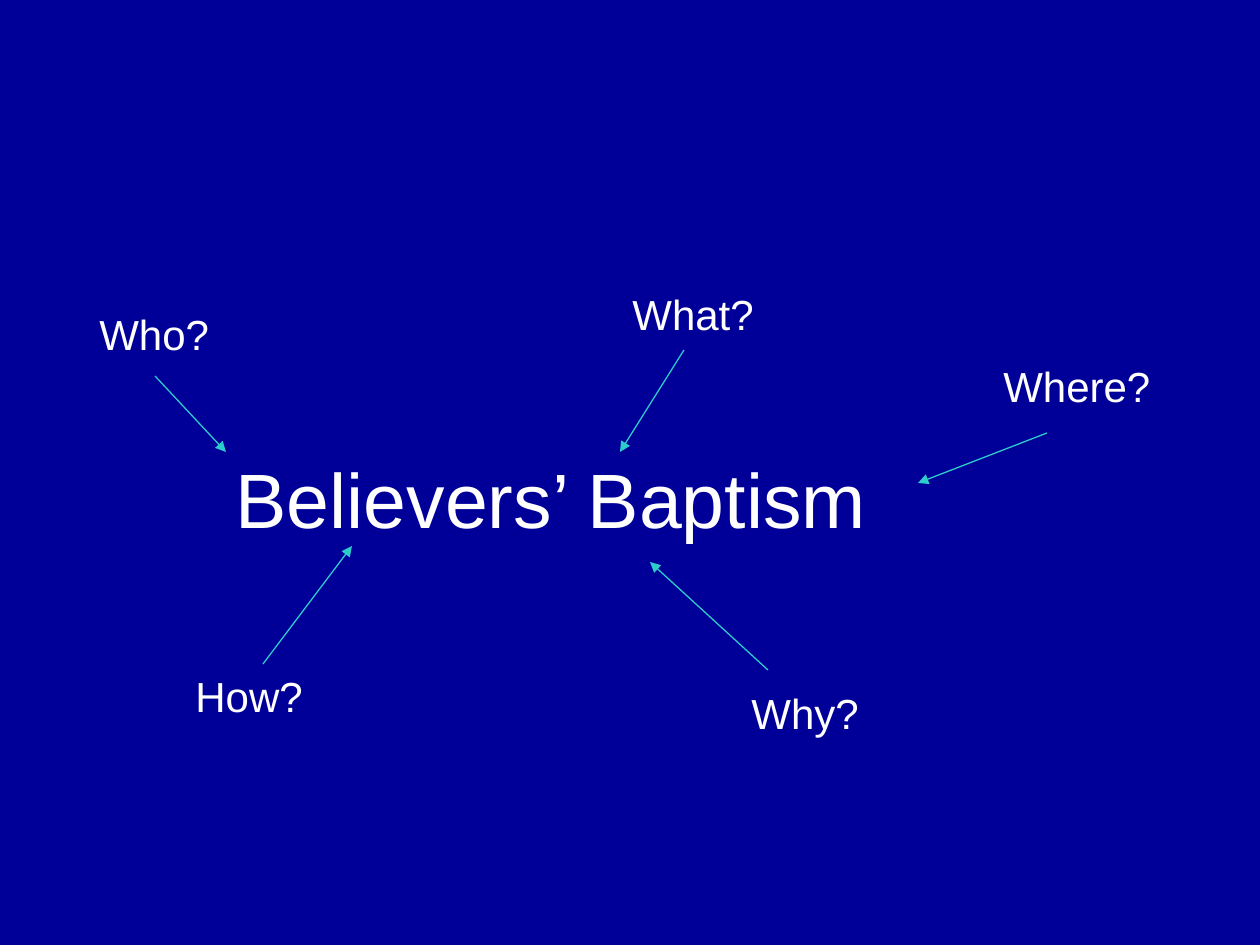
"""Build a slide of questions pointing at a central topic."""
from dataclasses import dataclass

from lxml import etree
from pptx import Presentation
from pptx.dml.color import RGBColor
from pptx.enum.shapes import MSO_CONNECTOR
from pptx.enum.text import MSO_ANCHOR, MSO_AUTO_SIZE, PP_ALIGN
from pptx.oxml.ns import qn
from pptx.slide import Slide
from pptx.text.text import TextFrame
from pptx.util import Emu, Pt

STRAIGHT = MSO_CONNECTOR.STRAIGHT
MIDDLE = MSO_ANCHOR.MIDDLE
TOP = MSO_ANCHOR.TOP
LEFT = PP_ALIGN.LEFT
FIT_SHAPE = MSO_AUTO_SIZE.SHAPE_TO_FIT_TEXT
NO_FIT = MSO_AUTO_SIZE.NONE

PX_PER_INCH = 126
FONT = "Arial"
COLORS = {"background": "000099", "text": "FFFFFF", "arrow": "2ECBCB"}
LABEL_HEIGHT = 63


@dataclass(frozen=True)
class Question:
    text: str
    left: int
    top: int
    width: int
    arrow_start: tuple[int, int]
    arrow_end: tuple[int, int]


QUESTIONS = (
    Question("Who?", 87, 302, 136, (155, 376), (226, 452)),
    Question("What?", 620, 282, 147, (684, 350), (620, 452)),
    Question("Where?", 991, 354, 174, (1047, 433), (918, 483)),
    Question("Why?", 739, 681, 134, (768, 670), (650, 562)),
    Question("How?", 183, 664, 134, (263, 664), (352, 546)),
)


def px(value: int) -> Emu:
    """Convert pixels to EMU."""
    return Emu(round(value * 914400 / PX_PER_INCH))


def color(name: str) -> RGBColor:
    """Look up a named colour."""
    return RGBColor.from_string(COLORS[name])


def write_text(frame: TextFrame, text: str, size: int) -> None:
    """Write one left-aligned run into a text frame."""
    paragraph = frame.paragraphs[0]
    paragraph.alignment = LEFT
    run = paragraph.add_run()
    run.text = text
    run.font.name = FONT
    run.font.size = Pt(size)
    run.font.color.rgb = color("text")


def format_title(slide: Slide) -> None:
    """Place the topic in the title placeholder."""
    title = slide.shapes.title
    title.left, title.top = px(223), px(403)
    title.width, title.height = px(694), px(190)
    frame = title.text_frame
    frame.word_wrap = True
    frame.auto_size = NO_FIT
    frame.vertical_anchor = MIDDLE
    write_text(frame, "Believers’ Baptism", 44)


def add_label(slide: Slide, question: Question) -> None:
    """Add the text of a question."""
    box = slide.shapes.add_textbox(
        px(question.left), px(question.top), px(question.width), px(LABEL_HEIGHT)
    )
    frame = box.text_frame
    frame.word_wrap = False
    frame.auto_size = FIT_SHAPE
    frame.vertical_anchor = TOP
    write_text(frame, question.text, 24)


def add_arrow(slide: Slide, question: Question) -> None:
    """Add the arrow from a question to the topic."""
    points = (*question.arrow_start, *question.arrow_end)
    arrow = slide.shapes.add_connector(STRAIGHT, *map(px, points))
    arrow.line.color.rgb = color("arrow")
    arrow.line.width = Pt(0.75)
    etree.SubElement(arrow.line._get_or_add_ln(), qn("a:tailEnd"), type="triangle")
    etree.SubElement(arrow._element.spPr, qn("a:effectLst"))


def main() -> None:
    """Build and save the presentation."""
    presentation = Presentation()
    presentation.slide_width = px(1260)
    presentation.slide_height = px(945)
    slide = presentation.slides.add_slide(presentation.slide_layouts[5])
    slide.background.fill.solid()
    slide.background.fill.fore_color.rgb = color("background")
    format_title(slide)
    for question in QUESTIONS:
        add_label(slide, question)
    for question in QUESTIONS:
        add_arrow(slide, question)
    presentation.save("out.pptx")


if __name__ == "__main__":
    main()
